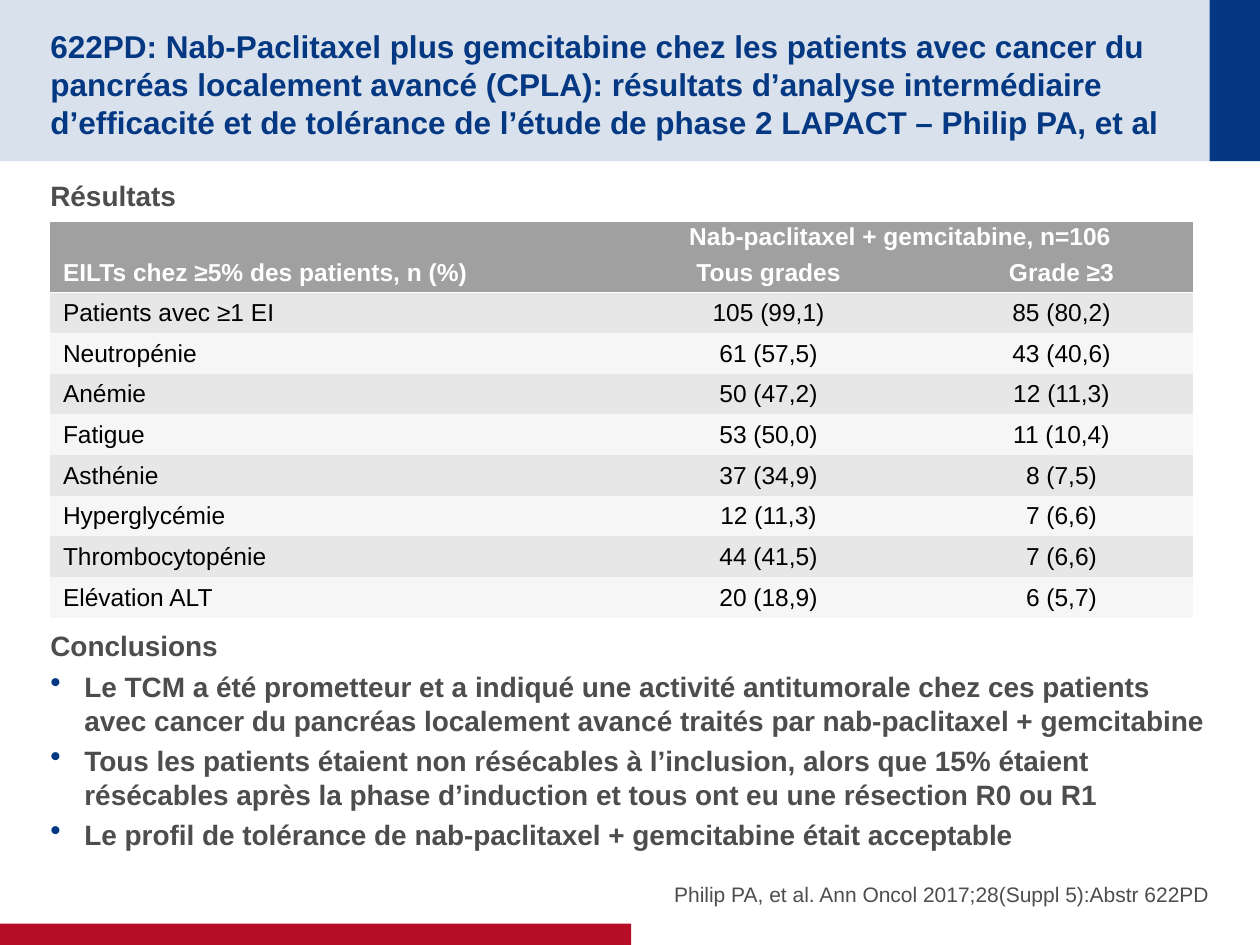
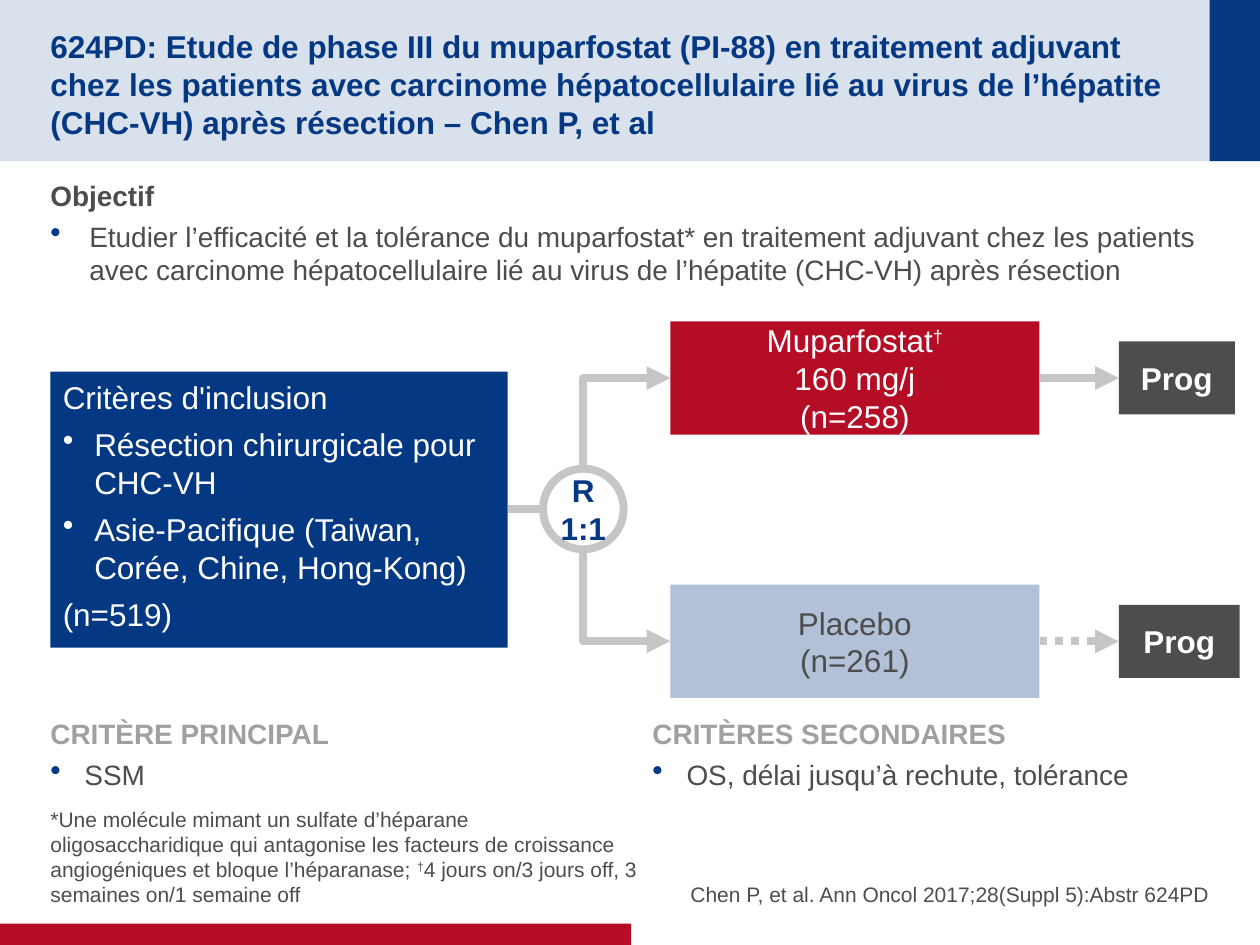
from dataclasses import dataclass

from lxml.etree import SubElement
from pptx import Presentation
from pptx.dml.color import RGBColor
from pptx.enum.dml import MSO_LINE
from pptx.enum.shapes import MSO_CONNECTOR as Connector, MSO_SHAPE as Preset
from pptx.enum.text import MSO_ANCHOR as Anchor, MSO_AUTO_SIZE as AutoSize, PP_ALIGN as Align
from pptx.oxml import parse_xml
from pptx.oxml.ns import nsdecls, qn
from pptx.util import Pt

PX = 9144  # one px is a hundredth of an inch
FONT = "Arial"
NO_TABLE_STYLE = "{2D5ABB26-0587-4C30-8999-92F81FD0307C}"
COLOURS = {
    "navy": "043882", "red": "B60D27", "pale": "D9E1EC", "placebo": "B2C0D8",
    "text": "4D4D4D", "grey": "A0A0A0", "link": "C6C6C6",
    "band dark": "E7E7E7", "band light": "F6F6F6", "white": "FFFFFF", "black": "000000",
}


@dataclass(frozen=True)
class Box:
    left: int
    top: int
    width: int
    height: int

    def emu(self) -> list[int]:
        return [side * PX for side in (self.left, self.top, self.width, self.height)]

    @property
    def right(self) -> int:
        return self.left + self.width

    @property
    def middle(self) -> int:
        return self.top + self.height // 2


@dataclass(frozen=True)
class Line:
    """One paragraph; an indent above zero gives it a bullet."""
    text: str
    size: int = 16
    colour: str = "text"
    bold: bool = False
    indent: int = 0
    bullet_colour: str = "navy"
    bullet_size: int = 110
    before: float = 0
    after: float = 4
    align: Align = Align.LEFT
    spacing: float | None = None


@dataclass(frozen=True)
class Panel:
    box: Box
    lines: list[Line]
    fill: str | None = None
    preset: Preset = Preset.RECTANGLE
    anchor: Anchor = Anchor.MIDDLE
    margins: tuple[int, int, int, int] = (10, 0, 10, 0)
    wrap: bool = True


def rgb(name: str) -> RGBColor:
    return RGBColor.from_string(COLOURS[name])


# Text
def write(frame, lines: list[Line]) -> None:
    frame.text = "\n".join(line.text for line in lines)
    for para, line in zip(frame.paragraphs, lines):
        if "†" in line.text:
            para.text = ""
            for piece in filter(None, line.text.partition("†")):
                span = para.add_run()
                span.text = piece
                if piece == "†":
                    span.font._element.set("baseline", "30000")
        para.alignment = line.align
        para.space_before, para.space_after = Pt(line.before), Pt(line.after)
        para.line_spacing = Pt(line.spacing) if line.spacing else 1.0
        for span in para.runs:
            span.font.name, span.font.size = FONT, Pt(line.size)
            span.font.bold = line.bold
            span.font.color.rgb = rgb(line.colour)
        if line.indent:
            props = para._p.get_or_add_pPr()
            props.set("marL", str(line.indent * PX))
            props.set("indent", str(-line.indent * PX))
            tint = SubElement(props, qn("a:buClr"))
            SubElement(tint, qn("a:srgbClr")).set("val", COLOURS[line.bullet_colour])
            SubElement(props, qn("a:buSzPct")).set("val", str(line.bullet_size * 1000))
            SubElement(props, qn("a:buChar")).set("char", "•")


def set_frame(frame, anchor: Anchor, margins: tuple[int, int, int, int], wrap: bool = True) -> None:
    frame.auto_size, frame.word_wrap, frame.vertical_anchor = AutoSize.NONE, wrap, anchor
    (frame.margin_left, frame.margin_top,
     frame.margin_right, frame.margin_bottom) = [side * PX for side in margins]


def add_text(page, box: Box, lines: list[Line], anchor: Anchor = Anchor.TOP,
             margins: tuple[int, int, int, int] = (0, 5, 0, 5)) -> None:
    frame = page.shapes.add_textbox(*box.emu()).text_frame
    set_frame(frame, anchor, margins)
    write(frame, lines)


# Shapes and connectors
def add_panel(page, panel: Panel):
    shape = page.shapes.add_shape(panel.preset, *panel.box.emu())
    shape.shadow.inherit = False
    shape.line.fill.background()
    if panel.fill:
        shape.fill.solid()
        shape.fill.fore_color.rgb = rgb(panel.fill)
    else:
        shape.fill.background()
    if panel.lines:
        set_frame(shape.text_frame, panel.anchor, panel.margins, panel.wrap)
        write(shape.text_frame, panel.lines)
    return shape


def style_link(line) -> None:
    line.color.rgb = rgb("link")
    line.width = Pt(4.5)


def add_link(page, start: tuple[int, int], end: tuple[int, int], arrow: str = "",
             dotted: bool = False, bent: bool = False) -> None:
    kind = Connector.ELBOW if bent else Connector.STRAIGHT
    link = page.shapes.add_connector(kind, *[value * PX for value in start + end])
    style_link(link.line)
    if dotted:
        link.line.dash_style = MSO_LINE.ROUND_DOT
    props = link._element.spPr
    if bent:
        props.find(qn("a:prstGeom")).set("prst", "bentConnector2")
    if arrow:
        SubElement(props.find(qn("a:ln")), qn(f"a:{arrow}")).set("type", "triangle")
    SubElement(props, qn("a:effectLst"))


# Parts that every slide shares
def add_page(deck, title: str, source: str):
    page = deck.slides.add_slide(deck.slide_layouts[5])
    for box, fill in ((Box(0, 0, 1000, 128), "pale"), (Box(960, 0, 40, 128), "navy"),
                      (Box(0, 733, 501, 17), "red")):
        add_panel(page, Panel(box, [], fill))
    heading = page.shapes.title
    page.shapes._spTree.append(heading._element)  # in front of the bands
    heading.left, heading.top, heading.width, heading.height = Box(40, 20, 901, 88).emu()
    set_frame(heading.text_frame, Anchor.MIDDLE, (0, 5, 0, 0))
    write(heading.text_frame, [Line(title, 18, "navy", True, after=0)])
    add_text(page, Box(508, 667, 452, 53), [Line(source, 12, align=Align.RIGHT)],
             Anchor.BOTTOM, (0, 0, 0, 0))
    return page


BODY = Box(40, 137, 920, 519)


# Slide 1: adverse events table and conclusions
EVENTS = [
    ("Patients avec ≥1 EI", "105 (99,1)", "85 (80,2)"),
    ("Neutropénie", "61 (57,5)", "43 (40,6)"),
    ("Anémie", "50 (47,2)", "12 (11,3)"),
    ("Fatigue", "53 (50,0)", "11 (10,4)"),
    ("Asthénie", "37 (34,9)", "8 (7,5)"),
    ("Hyperglycémie", "12 (11,3)", "7 (6,6)"),
    ("Thrombocytopénie", "44 (41,5)", "7 (6,6)"),
    ("Elévation ALT", "20 (18,9)", "6 (5,7)"),
]
HEADER = [
    ("EILTs chez ≥5% des patients, n (%)", "Nab-paclitaxel + gemcitabine, n=106", ""),
    ("", "Tous grades", "Grade ≥3"),
]


def add_events_table(page) -> None:
    rows = HEADER + EVENTS
    table = page.shapes.add_table(len(rows), 3, *Box(40, 176, 907, 314).emu()).table
    table._tbl.tblPr.find(qn("a:tableStyleId")).text = NO_TABLE_STYLE
    for column, width in zip(table.columns, (442, 256, 209)):
        column.width = width * PX
    for r, values in enumerate(rows):
        header = r < len(HEADER)
        table.rows[r].height = (28 if header else 32) * PX
        fill = "grey" if header else ("band dark", "band light")[r % 2]
        for c, value in enumerate(values):
            cell = table.cell(r, c)
            cell.fill.solid()
            cell.fill.fore_color.rgb = rgb(fill)
            cell.vertical_anchor = Anchor.BOTTOM if header else Anchor.MIDDLE
            write(cell.text_frame, [Line(
                value, 14, "white" if header else "black", header, after=0,
                align=Align.CENTER if c else Align.LEFT, spacing=13 if header else 16)])
            if header and (r == 1 or c == 0):
                cell._tc.get_or_add_tcPr().insert(0, parse_xml(
                    f'<a:lnB {nsdecls("a")} w="12700"><a:solidFill>'
                    f'<a:srgbClr val="{COLOURS["white"]}"/></a:solidFill></a:lnB>'))
    table.cell(0, 0).merge(table.cell(1, 0))
    table.cell(0, 1).merge(table.cell(0, 2))


def build_results(deck) -> None:
    page = add_page(
        deck,
        "622PD: Nab-Paclitaxel plus gemcitabine chez les patients avec cancer du pancréas "
        "localement avancé (CPLA): résultats d’analyse intermédiaire d’efficacité et de "
        "tolérance de l’étude de phase 2 LAPACT – Philip PA, et al",
        "Philip PA, et al. Ann Oncol 2017;28(Suppl 5):Abstr 622PD")
    conclusions = (
        "Le TCM a été prometteur et a indiqué une activité antitumorale chez ces patients "
        "avec cancer du pancréas localement avancé traités par nab-paclitaxel + gemcitabine",
        "Tous les patients étaient non résécables à l’inclusion, alors que 15% étaient "
        "résécables après la phase d’induction et tous ont eu une résection R0 ou R1",
        "Le profil de tolérance de nab-paclitaxel + gemcitabine était acceptable")
    add_text(page, BODY, [
        Line("Résultats", bold=True), Line("Conclusions", bold=True, before=234),
        *[Line(text, bold=True, indent=27) for text in conclusions]])
    add_events_table(page)


# Slide 2: trial design
def build_design(deck) -> None:
    page = add_page(
        deck,
        "624PD: Etude de phase III du muparfostat (PI-88) en traitement adjuvant chez les "
        "patients avec carcinome hépatocellulaire lié au virus de l’hépatite (CHC-VH) "
        "après résection – Chen P, et al",
        "Chen P, et al. Ann Oncol 2017;28(Suppl 5):Abstr 624PD")
    add_text(page, BODY, [
        Line("Objectif", bold=True),
        Line("Etudier l’efficacité et la tolérance du muparfostat* en traitement adjuvant chez "
             "les patients avec carcinome hépatocellulaire lié au virus de l’hépatite (CHC-VH) "
             "après résection", indent=31)])
    add_text(page, Box(40, 667, 468, 53), [Line(
        "*Une molécule mimant un sulfate d’héparane oligosaccharidique qui antagonise les "
        "facteurs de croissance angiogéniques et bloque l’héparanase; †4 jours on/3 jours off, "
        "3 semaines on/1 semaine off", 12)], Anchor.BOTTOM, (0, 0, 0, 0))

    # Endpoints
    for left, inset, heading, endpoint in (
            (40, 0, "CRITÈRE PRINCIPAL", "SSM"),
            (508, 10, "CRITÈRES SECONDAIRES", "OS, délai jusqu’à rechute, tolérance")):
        add_text(page, Box(left, 564, 452, 87),
                 [Line(heading, colour="grey", bold=True), Line(endpoint, indent=27)],
                 margins=(inset, 5, inset, 5))

    # Inclusion criteria and randomisation
    criteria = [("Critères d'inclusion", 0), ("Résection chirurgicale pour CHC-VH", 25),
                ("Asie-Pacifique (Taiwan, Corée, Chine, Hong-Kong)", 25), ("(n=519)", 0)]
    inclusion = Box(40, 295, 363, 219)
    add_panel(page, Panel(inclusion, [
        Line(text, 18, "white", indent=indent, bullet_colour="white", bullet_size=100, after=5.4)
        for text, indent in criteria], "navy", anchor=Anchor.TOP, margins=(10, 5, 10, 5)))
    split = Box(431, 372, 64, 64)
    circle = add_panel(page, Panel(
        split, [Line(text, 18, "navy", True, after=0, align=Align.CENTER) for text in ("R", "1:1")],
        preset=Preset.OVAL, margins=(10, 5, 10, 5), wrap=False))
    style_link(circle.line)
    add_link(page, (inclusion.right, split.middle), (split.left, split.middle))

    # Treatment arms
    for arm, texts, fill, colour, exit_width, split_edge, dotted in (
            (Box(532, 255, 293, 90), ("Muparfostat†", "160 mg/j", "(n=258)"),
             "red", "white", 92, split.top, False),
            (Box(532, 464, 293, 90), ("Placebo", "(n=261)"),
             "placebo", "text", 96, split.top + split.height, True)):
        outcome = Box(888, arm.middle - 29, exit_width, 58)
        add_link(page, (arm.left, arm.middle), (split.left + split.width // 2, split_edge),
                 "headEnd", bent=True)
        add_link(page, (arm.right, arm.middle), (outcome.left, arm.middle), "tailEnd", dotted)
        add_panel(page, Panel(arm, [
            Line(text, 18, colour, after=0, align=Align.CENTER) for text in texts], fill))
        add_panel(page, Panel(outcome, [
            Line("Prog", 18, "white", True, after=0, align=Align.CENTER)], "text"))


def main() -> None:
    deck = Presentation()
    deck.slide_width, deck.slide_height = 1000 * PX, 750 * PX
    build_results(deck)
    build_design(deck)
    deck.save("out.pptx")


if __name__ == "__main__":
    main()
